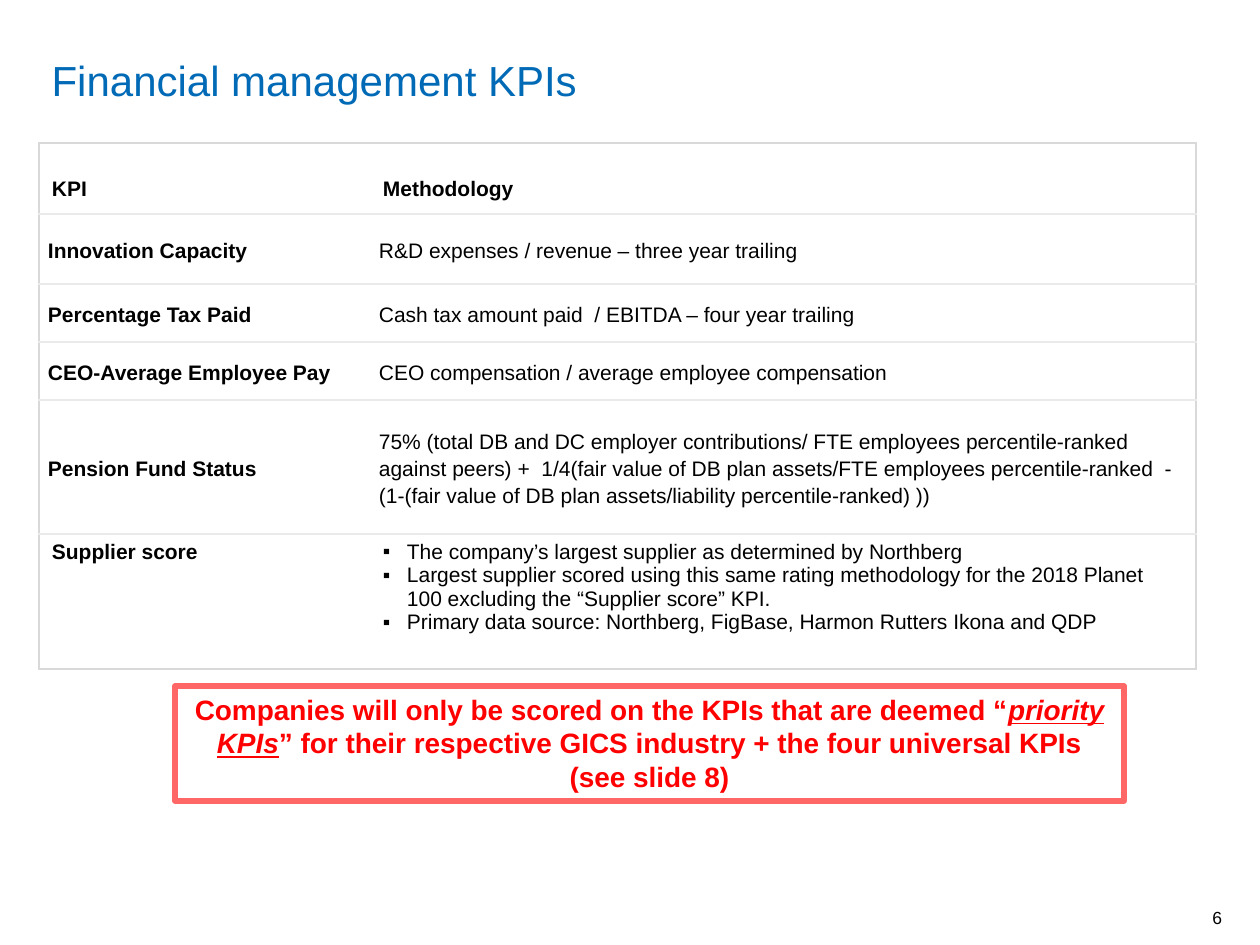
from lxml.etree import SubElement
from pptx import Presentation
from pptx.dml.color import RGBColor
from pptx.enum.shapes import MSO_SHAPE
from pptx.enum.text import MSO_ANCHOR as ANCHOR, PP_ALIGN as ALIGN
from pptx.oxml import parse_xml
from pptx.oxml.ns import nsdecls, qn
from pptx.util import Emu, Pt

BLUE = RGBColor(0x00, 0x6A, 0xB6)
BLACK = RGBColor(0x00, 0x00, 0x00)
RED = RGBColor(0xFF, 0x00, 0x00)
CORAL = RGBColor(0xFF, 0x66, 0x66)
OUTER = RGBColor(0xD9, 0xD9, 0xD9)
INNER = RGBColor(0xEA, 0xEA, 0xEA)

PX_PER_INCH = 126
COL_WIDTHS = [331, 826]
ROW_HEIGHTS = [71, 70, 58, 58, 134, 135]
HEADER = ("KPI", "Methodology")
KPIS = [
    ("Innovation Capacity", "R&D expenses / revenue – three year trailing"),
    ("Percentage Tax Paid", "Cash tax amount paid  / EBITDA – four year trailing"),
    ("CEO-Average Employee Pay", "CEO compensation / average employee compensation"),
    ("Pension Fund Status",
     "75% (total DB and DC employer contributions/ FTE employees percentile-ranked "
     "against peers) +  1/4(fair value of DB plan assets/FTE employees "
     "percentile-ranked  - (1-(fair value of DB plan assets/liability "
     "percentile-ranked) ))"),
]
SUPPLIER = "Supplier score"
SUPPLIER_POINTS = [
    "The company’s largest supplier as determined by Northberg",
    "Largest supplier scored using this same rating methodology for the 2018 Planet "
    "100 excluding the “Supplier score” KPI.",
    "Primary data source: Northberg, FigBase, Harmon Rutters Ikona and QDP",
]


def px(n):
    return Emu(round(n * 914400 / PX_PER_INCH))


def add_run(p, text, size, color, bold=False, emphasis=False):
    r = p.add_run()
    r.text = text
    font = r.font
    font.name, font.size, font.bold = "Arial", Pt(size), bold
    font.color.rgb = color
    if emphasis:
        font.italic = font.underline = True


def set_margins(target, horizontal, vertical):
    target.margin_left = target.margin_right = px(horizontal)
    target.margin_top = target.margin_bottom = px(vertical)


def set_borders(cell, colors):
    """Draw the borders given as {side: colour}; hide the other sides."""
    tc_pr = cell._tc.get_or_add_tcPr()
    for i, side in enumerate("LRTB"):
        color = colors.get(side)
        fill = (f'<a:solidFill><a:srgbClr val="{color}"/></a:solidFill>'
                if color else "<a:noFill/>")
        tc_pr.insert(i, parse_xml(
            f'<a:ln{side} {nsdecls("a")} w="{Pt(1)}">{fill}</a:ln{side}>'))


def set_bullet(p, char, indent):
    p_pr = p._p.get_or_add_pPr()
    p_pr.set("marL", str(px(indent)))
    p_pr.set("indent", str(-px(indent)))
    SubElement(p_pr, qn("a:buFont")).set("typeface", "Arial")
    SubElement(p_pr, qn("a:buChar")).set("char", char)


def add_title(slide, x, y, w, h):
    title = slide.shapes.title
    title.left, title.top, title.width, title.height = map(px, (x, y, w, h))
    tf = title.text_frame
    tf.vertical_anchor = ANCHOR.TOP
    p = tf.paragraphs[0]
    p.alignment = ALIGN.LEFT
    add_run(p, "Financial management KPIs", 24, BLUE)


def add_kpi_table(slide, x, y):
    rows = [HEADER, *KPIS, (SUPPLIER, SUPPLIER_POINTS)]
    last = len(rows) - 1
    frame = slide.shapes.add_table(len(rows), 2, px(x), px(y),
                                   px(sum(COL_WIDTHS)), px(sum(ROW_HEIGHTS)))
    table = frame.table
    table.first_row = table.horz_banding = False
    for column, width in zip(table.columns, COL_WIDTHS):
        column.width = px(width)
    for i, (row, height) in enumerate(zip(rows, ROW_HEIGHTS)):
        table.rows[i].height = px(height)
        for j, content in enumerate(row):
            cell = table.cell(i, j)
            cell.fill.background()
            set_borders(cell, {"LR"[j]: OUTER,
                               "T": OUTER if i == 0 else INNER,
                               "B": OUTER if i == last else INNER})
            if i == 0:
                cell.vertical_anchor = ANCHOR.BOTTOM
                set_margins(cell, 13, 13)
            elif i < last:
                cell.vertical_anchor = ANCHOR.MIDDLE
                set_margins(cell, 9, 0)
            else:
                cell.vertical_anchor = ANCHOR.TOP
                set_margins(cell, 13, 6)
            tf = cell.text_frame
            bulleted = isinstance(content, list)
            for k, text in enumerate(content if bulleted else [content]):
                p = tf.add_paragraph() if k else tf.paragraphs[0]
                if bulleted:
                    set_bullet(p, "▪", 24)
                if 0 < i < last:
                    p.line_spacing = 1.15
                add_run(p, text, 12, BLACK, bold=i == 0 or j == 0)


def add_callout(slide, x, y, w, h):
    sp = slide.shapes.add_shape(MSO_SHAPE.RECTANGLE, *map(px, (x, y, w, h)))
    sp.shadow.inherit = False
    sp.fill.background()
    sp.line.color.rgb = CORAL
    sp.line.width = Pt(3)
    tf = sp.text_frame
    tf.word_wrap = True
    tf.vertical_anchor = ANCHOR.TOP
    p = tf.paragraphs[0]
    p.alignment = ALIGN.CENTER
    for text, emphasis in [
        ("Companies will only be scored on the KPIs that are deemed “", False),
        ("priority KPIs", True),
        ("” for their respective GICS industry + the four universal KPIs "
         "(see slide 8)", False),
    ]:
        add_run(p, text, 16, RED, bold=True, emphasis=emphasis)


def add_page_number(slide, x, y, w, h):
    tf = slide.shapes.add_textbox(*map(px, (x, y, w, h))).text_frame
    tf.word_wrap = True
    tf.vertical_anchor = ANCHOR.BOTTOM
    set_margins(tf, 0, 0)
    p = tf.paragraphs[0]
    p.alignment = ALIGN.RIGHT
    add_run(p, "6", 10, BLACK)


def main():
    prs = Presentation()
    prs.slide_width, prs.slide_height = px(1260), px(945)
    slide = prs.slides.add_slide(prs.slide_layouts.get_by_name("Title Only"))
    add_page_number(slide, 1125, 903, 97, 25)
    add_title(slide, 39, 48, 1037, 113)
    add_kpi_table(slide, 39, 143)
    add_callout(slide, 175, 686, 949, 115)
    prs.save("out.pptx")


if __name__ == "__main__":
    main()
